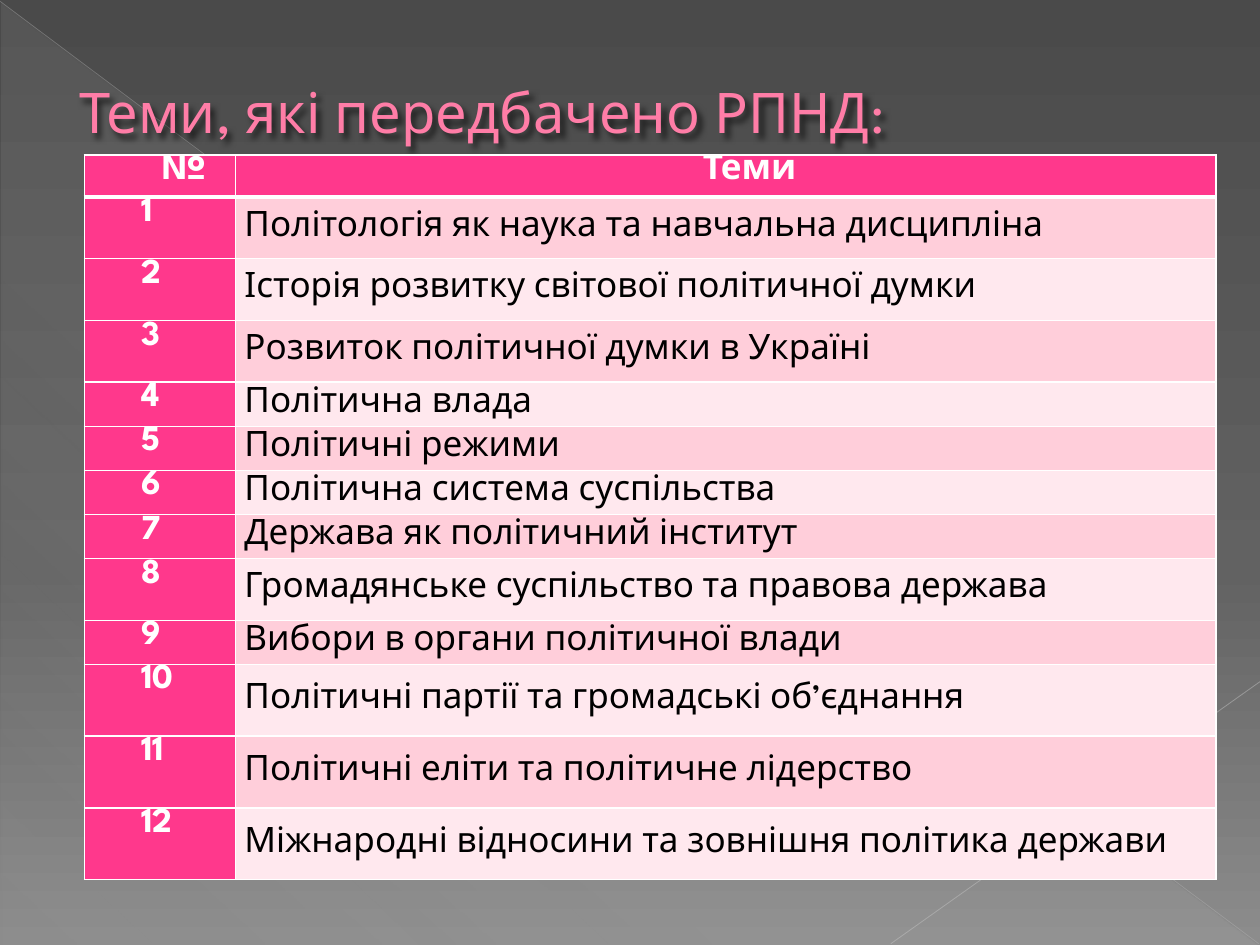
"""Build a slide that lists the twelve course topics in a table."""
from lxml import etree
from pptx import Presentation, util as u
from pptx.dml.color import RGBColor
from pptx.enum import shapes, text
from pptx.oxml import parse_xml
from pptx.oxml.ns import nsdecls, qn

TITLE = "Теми, які передбачено РПНД:"
HEADINGS = ("№", "Теми")
SHORT, MEDIUM, TALL = 0.35, 0.49, 0.57
TOPICS = [
    ("Політологія як наука та навчальна дисципліна", MEDIUM),
    ("Історія розвитку світової політичної думки", MEDIUM),
    ("Розвиток політичної думки в Україні", MEDIUM),
    ("Політична влада", SHORT),
    ("Політичні режими", SHORT),
    ("Політична система суспільства", SHORT),
    ("Держава як політичний інститут", SHORT),
    ("Громадянське суспільство та правова держава", MEDIUM),
    ("Вибори в органи політичної влади", SHORT),
    ("Політичні партії та громадські об’єднання", TALL),
    ("Політичні еліти та політичне лідерство", TALL),
    ("Міжнародні відносини та зовнішня політика держави", TALL),
]
HEADER_HEIGHT = 0.3
COLUMNS = (1.2, 7.78)
DIAGONALS = [
    ((0, 0.01), (9.99, 7.49), "BFBFBF", 0.39, 35),
    ((10, 5.41), (7.07, 7.49), "C6C6C6", 0.47, 45),
]
THEME = {
    "font": "League Spartan", "title_size": 32, "table_size": 20,
    "title": "FF7DA7", "outline": "B12761", "accent": "FF388C",
    "bands": ("FFCEDA", "FFE8EE"), "light": "FFFFFF", "dark": "000000",
    "backdrop": [(0, "4A4A4A", 100), (60, "626262", 100), (100, "8C8C8C", 100)],
    "sheen": [(0, "D2D2D2", 10), (70, "D2D2D2", 8), (100, "D2D2D2", 1)],
}


def apply(target, values):
    for name, value in values.items():
        setattr(target, name, value)


def color_xml(color, opacity=100):
    return f'<a:srgbClr val="{color}"><a:alpha val="{opacity * 1000}"/></a:srgbClr>'


def gradient(stops, angle):
    marks = "".join(f'<a:gs pos="{at * 1000}">{color_xml(color, opacity)}</a:gs>'
                    for at, color, opacity in stops)
    return parse_xml(f'<a:gradFill {nsdecls("a")} rotWithShape="1"><a:gsLst>{marks}</a:gsLst>'
                     f'<a:lin ang="{angle * 60000}" scaled="0"/></a:gradFill>')


def line_xml(tag, color, points):
    return parse_xml(f'<a:{tag} {nsdecls("a")} w="{u.Pt(points)}"><a:solidFill>'
                     f'{color_xml(color)}</a:solidFill></a:{tag}>')


def use_gradient(holder, fill, stops, angle):
    fill.solid()
    solid = holder.find(".//" + qn("a:solidFill"))
    solid.getparent().replace(solid, gradient(stops, angle))


def write(para, words, size, color, bold=False):
    span = para.add_run()
    span.text = words
    apply(span.font, {"name": THEME["font"], "size": u.Pt(size), "bold": bold})
    span.font.color.rgb = RGBColor.from_string(color)
    return span


def draw_backdrop(page):
    use_gradient(page.element, page.background.fill, THEME["backdrop"], 90)
    sheen = page.shapes.add_shape(shapes.MSO_SHAPE.RIGHT_TRIANGLE, u.Inches(0.01),
                                  u.Inches(0.02), u.Inches(9.98), u.Inches(7.48))
    sheen.shadow.inherit = False
    sheen.line.fill.background()
    use_gradient(sheen.element.spPr, sheen.fill, THEME["sheen"], 133)
    for start, end, color, width, opacity in DIAGONALS:
        ends = [u.Inches(value) for value in start + end]
        diagonal = page.shapes.add_connector(shapes.MSO_CONNECTOR.STRAIGHT, *ends)
        diagonal.line.width = u.Pt(width)
        diagonal.line.color.rgb = RGBColor.from_string(color)
        properties = diagonal.element.spPr
        tint = properties.find(".//" + qn("a:srgbClr"))
        etree.SubElement(tint, qn("a:alpha"), val=str(opacity * 1000))
        etree.SubElement(properties, qn("a:effectLst"))


def draw_title(page):
    box = page.shapes.add_textbox(0, u.Inches(0.53), u.Inches(9), u.Inches(0.71))
    apply(box.text_frame, {"word_wrap": True, "vertical_anchor": text.MSO_ANCHOR.MIDDLE})
    para = box.text_frame.paragraphs[0]
    para._p.get_or_add_pPr().set("marL", str(u.Inches(0.53)))
    span = write(para, TITLE, THEME["title_size"], THEME["title"])
    span.font._element.insert(0, line_xml("ln", THEME["outline"], 0.5))
    box.element.spPr.append(parse_xml(
        f'<a:effectLst {nsdecls("a")}><a:outerShdw blurRad="38100" dist="38100" dir="2700000">'
        f'{color_xml(THEME["dark"], 60)}</a:outerShdw></a:effectLst>'))


def fill_cell(cell, words, fill, color, bold, align, anchor, indent, borders):
    apply(cell, {"margin_left": u.Inches(0.07), "margin_right": u.Inches(0.07),
                 "margin_top": 0, "margin_bottom": 0, "vertical_anchor": anchor})
    cell.fill.solid()
    cell.fill.fore_color.rgb = RGBColor.from_string(fill)
    for place, (side, points) in enumerate(zip("LRTB", borders)):
        cell._tc.tcPr.insert(place, line_xml("ln" + side, THEME["light"], points))
    para = cell.text_frame.paragraphs[0]
    para.alignment = align
    apply_indent = para._p.get_or_add_pPr().set
    apply_indent("marL", "0")
    apply_indent("indent", str(u.Inches(indent)))
    write(para, words, THEME["table_size"], color, bold)


def draw_table(page):
    heights = [HEADER_HEIGHT] + [height for _, height in TOPICS]
    frame = page.shapes.add_table(len(heights), len(COLUMNS), u.Inches(0.67), u.Inches(1.23),
                                  u.Inches(sum(COLUMNS)), u.Inches(sum(heights)))
    table = frame.table
    for column, width in zip(table.columns, COLUMNS):
        column.width = u.Inches(width)
    for row, height in zip(table.rows, heights):
        row.height = u.Inches(height)
    align, anchor = text.PP_ALIGN, text.MSO_ANCHOR
    label = (THEME["accent"], THEME["light"], True)
    for column, heading in enumerate(HEADINGS):
        fill_cell(table.cell(0, column), heading, *label, align.CENTER, anchor.TOP, 0.38,
                  (1, 1, 1, 3))
    for number, (topic, _) in enumerate(TOPICS, 1):
        borders = (1, 1, 3 if number == 1 else 1, 1)
        band = THEME["bands"][(number - 1) % 2]
        fill_cell(table.cell(number, 0), str(number), *label, align.JUSTIFY, anchor.TOP, 0.38,
                  borders)
        fill_cell(table.cell(number, 1), topic, band, THEME["dark"], False, align.LEFT,
                  anchor.MIDDLE, 0, borders)


def main():
    deck = Presentation()
    apply(deck, {"slide_width": u.Inches(10), "slide_height": u.Inches(7.5)})
    page = deck.slides.add_slide(deck.slide_layouts[6])
    draw_backdrop(page)
    draw_title(page)
    draw_table(page)
    deck.save("out.pptx")


if __name__ == "__main__":
    main()
